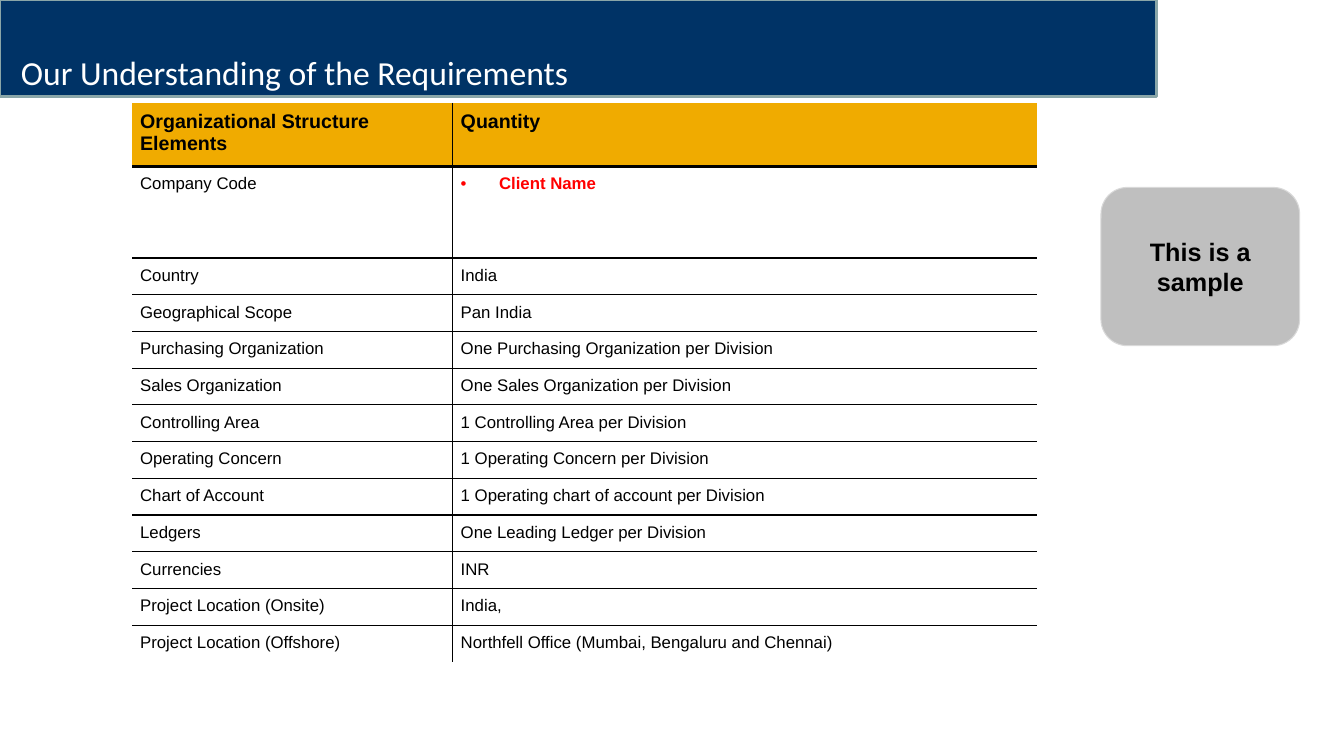
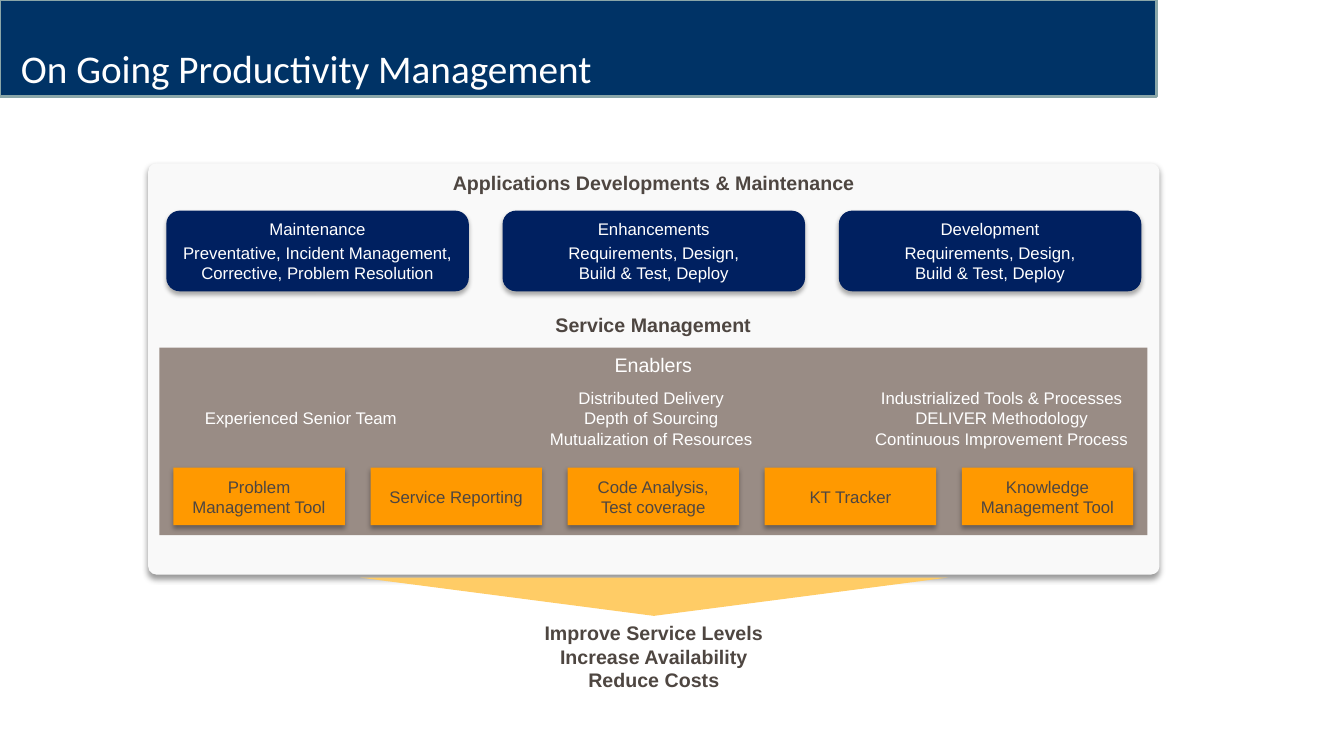
from dataclasses import dataclass

from lxml import etree
from pptx import Presentation
from pptx.dml.color import RGBColor
from pptx.enum.shapes import MSO_SHAPE
from pptx.enum.text import MSO_ANCHOR, PP_ALIGN
from pptx.oxml.ns import qn
from pptx.util import Inches, Pt

RECT = MSO_SHAPE.RECTANGLE
ROUNDED = MSO_SHAPE.ROUNDED_RECTANGLE
TRIANGLE = MSO_SHAPE.ISOSCELES_TRIANGLE
TOP, MIDDLE, BOTTOM = MSO_ANCHOR.TOP, MSO_ANCHOR.MIDDLE, MSO_ANCHOR.BOTTOM
LEFT, CENTER, JUSTIFY = PP_ALIGN.LEFT, PP_ALIGN.CENTER, PP_ALIGN.JUSTIFY

COLORS = {
    "band": "003366", "band_edge": "8AA6A8", "white": "FFFFFF", "black": "000000",
    "header": "F0AB00", "red": "FF0000", "note": "BFBFBF", "note_edge": "D9D9D9",
    "panel": "F9F9F9", "card": "002060", "enablers": "998C85", "tool": "FF9900",
    "arrow": "FFCC66", "brown": "4E4641",
}


@dataclass(frozen=True)
class Area:
    left: float
    top: float
    width: float
    height: float

    def lengths(self):
        return [Inches(v) for v in (self.left, self.top, self.width, self.height)]


@dataclass(frozen=True)
class Style:
    size: float
    color: str
    bold: bool = False
    font: str = "Arial"
    align: PP_ALIGN = CENTER
    anchor: MSO_ANCHOR = MIDDLE
    wrap: bool = True
    before: float = 0


@dataclass(frozen=True)
class Shadow:
    alpha: int
    blur: float
    distance: float


PANEL_SHADOW = Shadow(40, 4, 3)
BOX_SHADOW = Shadow(32, 3.5, 2.2)
HEADING = Style(14, "brown", bold=True, anchor=TOP)
CELL = Style(12, "black", align=LEFT, anchor=TOP)
HEADER_CELL = Style(14, "black", bold=True, align=LEFT, anchor=TOP)
CLIENT_CELL = Style(12, "red", bold=True, align=JUSTIFY, anchor=TOP)

STRUCTURE_ROWS = [
    ("Organizational Structure Elements", "Quantity"),
    ("Company Code", "Client Name"),
    ("Country", "India"),
    ("Geographical Scope", "Pan India"),
    ("Purchasing Organization", "One Purchasing Organization per Division"),
    ("Sales Organization", "One Sales Organization per Division"),
    ("Controlling Area", "1 Controlling Area per Division"),
    ("Operating Concern", "1 Operating Concern per Division"),
    ("Chart of Account", "1 Operating chart of account per Division"),
    ("Ledgers", "One Leading Ledger per Division"),
    ("Currencies", "INR"),
    ("Project Location (Onsite)", "India,"),
    ("Project Location (Offshore)", "Northfell Office (Mumbai, Bengaluru and Chennai)"),
]
CARDS = [
    ("Maintenance", "Preventative, Incident Management,\nCorrective, Problem Resolution"),
    ("Enhancements", "Requirements, Design,\nBuild & Test, Deploy"),
    ("Development", "Requirements, Design,\nBuild & Test, Deploy"),
]
ENABLERS = [
    ("Experienced Senior Team",),
    ("Distributed Delivery", "Depth of Sourcing", "Mutualization of Resources"),
    ("Industrialized Tools & Processes", "DELIVER Methodology",
     "Continuous Improvement Process"),
]
TOOLS = ["Problem\nManagement Tool", "Service Reporting", "Code Analysis,\nTest coverage",
         "KT Tracker", "Knowledge Management Tool"]


def rgb(name: str) -> RGBColor:
    return RGBColor.from_string(COLORS[name])


def spread(first: float, last: float, count: int) -> list[float]:
    """Evenly spaced left edges from first to last."""
    return [first + (last - first) * i / (count - 1) for i in range(count)]


def write(frame, paragraphs, style: Style) -> None:
    """Fill a text frame with one styled paragraph per string."""
    frame.word_wrap = style.wrap
    frame.vertical_anchor = style.anchor
    for index, text in enumerate(paragraphs):
        paragraph = frame.add_paragraph() if index else frame.paragraphs[0]
        paragraph.text = text
        paragraph.alignment = style.align
        if index and style.before:
            paragraph.space_before = Pt(style.before)
        for span in paragraph.runs:
            span.font.name = style.font
            span.font.size = Pt(style.size)
            span.font.bold = style.bold
            span.font.color.rgb = rgb(style.color)
        # Line breaks take the text size too
        for line_break in paragraph._p.findall(qn("a:br")):
            etree.SubElement(line_break, qn("a:rPr"), sz=str(int(style.size * 100)))


def add_text(page, area: Area, paragraphs, style: Style):
    box = page.shapes.add_textbox(*area.lengths())
    write(box.text_frame, paragraphs, style)
    return box


def add_shadow(shape, shadow: Shadow) -> None:
    effects = shape._element.spPr.find(qn("a:effectLst"))
    outer = etree.SubElement(
        effects, qn("a:outerShdw"), blurRad=str(Pt(shadow.blur)),
        dist=str(Pt(shadow.distance)), dir="5400000", algn="t", rotWithShape="0")
    color = etree.SubElement(outer, qn("a:srgbClr"), val=COLORS["black"])
    etree.SubElement(color, qn("a:alpha"), val=str(shadow.alpha * 1000))


def add_box(page, kind, area: Area, fill: str, paragraphs=(), style: Style | None = None,
            edge: tuple[str, float] | None = None, shadow: Shadow | None = None):
    shape = page.shapes.add_shape(kind, *area.lengths())
    shape.shadow.inherit = False
    shape.fill.solid()
    shape.fill.fore_color.rgb = rgb(fill)
    if edge:
        shape.line.color.rgb = rgb(edge[0])
        shape.line.width = Pt(edge[1])
    else:
        shape.line.fill.background()
    if shadow:
        add_shadow(shape, shadow)
    if style:
        write(shape.text_frame, paragraphs, style)
    return shape


def add_page(deck, title: str, size: float):
    """Start a slide with the shared title band."""
    page = deck.slides.add_slide(deck.slide_layouts[6])
    add_box(page, RECT, Area(0, 0, 11.47, 0.96), "band", edge=("band_edge", 2))
    style = Style(size, "white", font="Calibri", align=LEFT, anchor=BOTTOM)
    heading = add_text(page, Area(0.11, 0.08, 10.81, 0.88), [title], style)
    heading.text_frame.paragraphs[0].line_spacing = 1.2
    return page


def set_borders(cell, widths: dict[str, float]) -> None:
    """Draw the four cell sides; a width of 0 hides the side."""
    properties = cell._tc.get_or_add_tcPr()
    for index, side in enumerate("LRTB"):
        width = widths.get(side, 0)
        line = etree.Element(qn(f"a:ln{side}"), w=str(Pt(width)))
        if width:
            fill = etree.SubElement(line, qn("a:solidFill"))
            etree.SubElement(fill, qn("a:srgbClr"), val=COLORS["black"])
        else:
            etree.SubElement(line, qn("a:noFill"))
        properties.insert(index, line)


def add_bullet(paragraph) -> None:
    properties = paragraph._p.get_or_add_pPr()
    properties.set("marL", str(Inches(0.38)))
    properties.set("indent", str(Inches(-0.38)))
    etree.SubElement(properties, qn("a:buFont"), typeface="Arial")
    etree.SubElement(properties, qn("a:buChar"), char="•")
    tabs = etree.SubElement(properties, qn("a:tabLst"))
    etree.SubElement(tabs, qn("a:tab"), pos=str(Inches(0.5)), algn="l")


def add_structure_table(page, area: Area) -> None:
    count = len(STRUCTURE_ROWS)
    table = page.shapes.add_table(count, 2, *area.lengths()).table
    table.first_row = table.horz_banding = False
    for column, width in zip(table.columns, (3.18, 5.8)):
        column.width = Inches(width)
    heights = [0.63, 0.91]
    heights += [(area.height - sum(heights)) / (count - 2)] * (count - 2)
    for row, texts in enumerate(STRUCTURE_ROWS):
        table.rows[row].height = Inches(heights[row])
        for column, text in enumerate(texts):
            cell = table.cell(row, column)
            cell.margin_left = cell.margin_right = Inches(0.08)
            cell.margin_top = cell.margin_bottom = Inches(0.08)
            is_client = (row, column) == (1, 1)
            style = HEADER_CELL if row == 0 else CLIENT_CELL if is_client else CELL
            if is_client:
                add_bullet(cell.text_frame.paragraphs[0])
            write(cell.text_frame, [text], style)
            if row == 0:
                cell.fill.solid()
                cell.fill.fore_color.rgb = rgb("header")
            else:
                cell.fill.background()
            set_borders(cell, {
                "L": column, "R": 1 - column,
                "T": (0, 2.25)[row] if row < 2 else 1,
                "B": 2.25 if row == 0 else int(row < count - 1),
            })


def build_requirements(deck) -> None:
    page = add_page(deck, "Our Understanding of the Requirements", 24)
    add_structure_table(page, Area(1.31, 1.02, 8.98, 5.55))
    add_box(page, ROUNDED, Area(10.92, 1.86, 1.97, 1.57), "note", ["This is a sample"],
            Style(18, "black", bold=True), edge=("note_edge", 0.75))


def build_productivity(deck) -> None:
    page = add_page(deck, "On Going Productivity Management", 28)

    # Main panel
    panel = add_box(page, ROUNDED, Area(1.47, 1.62, 10.03, 4.08), "panel",
                    ["Applications Developments & Maintenance"], HEADING,
                    shadow=PANEL_SHADOW)
    panel.adjustments[0] = 0.02

    # Service cards
    for left, card in zip(spread(1.65, 8.32, len(CARDS)), CARDS):
        add_box(page, ROUNDED, Area(left, 2.09, 3, 0.8), "card", card,
                Style(12, "white", before=3), shadow=BOX_SHADOW)

    # Enablers and tools
    add_text(page, Area(4.98, 3.06, 3, 0.32), ["Service Management"], HEADING)
    add_box(page, RECT, Area(1.58, 3.45, 9.8, 1.86), "enablers", ["Enablers"],
            Style(14, "white", anchor=TOP))
    for left, lines in zip(spread(1.62, 8.57, len(ENABLERS)), ENABLERS):
        add_text(page, Area(left, 3.8, 2.73, 0.7), lines, Style(12, "white", wrap=False))
    for left, tool in zip(spread(1.72, 9.54, len(TOOLS)), TOOLS):
        add_box(page, RECT, Area(left, 4.64, 1.7, 0.57), "tool", [tool],
                Style(12, "brown"), shadow=BOX_SHADOW)

    # Outcome
    arrow = add_box(page, TRIANGLE, Area(3.57, 5.73, 5.83, 0.38), "arrow")
    arrow.rotation = 180
    add_text(page, Area(4.97, 6.11, 3.03, 0.8),
             ["Improve Service Levels", "Increase Availability", "Reduce Costs"],
             Style(14, "brown", bold=True))


def main() -> None:
    deck = Presentation()
    deck.slide_width, deck.slide_height = Inches(13.33), Inches(7.5)
    build_requirements(deck)
    build_productivity(deck)
    deck.save("out.pptx")


if __name__ == "__main__":
    main()
